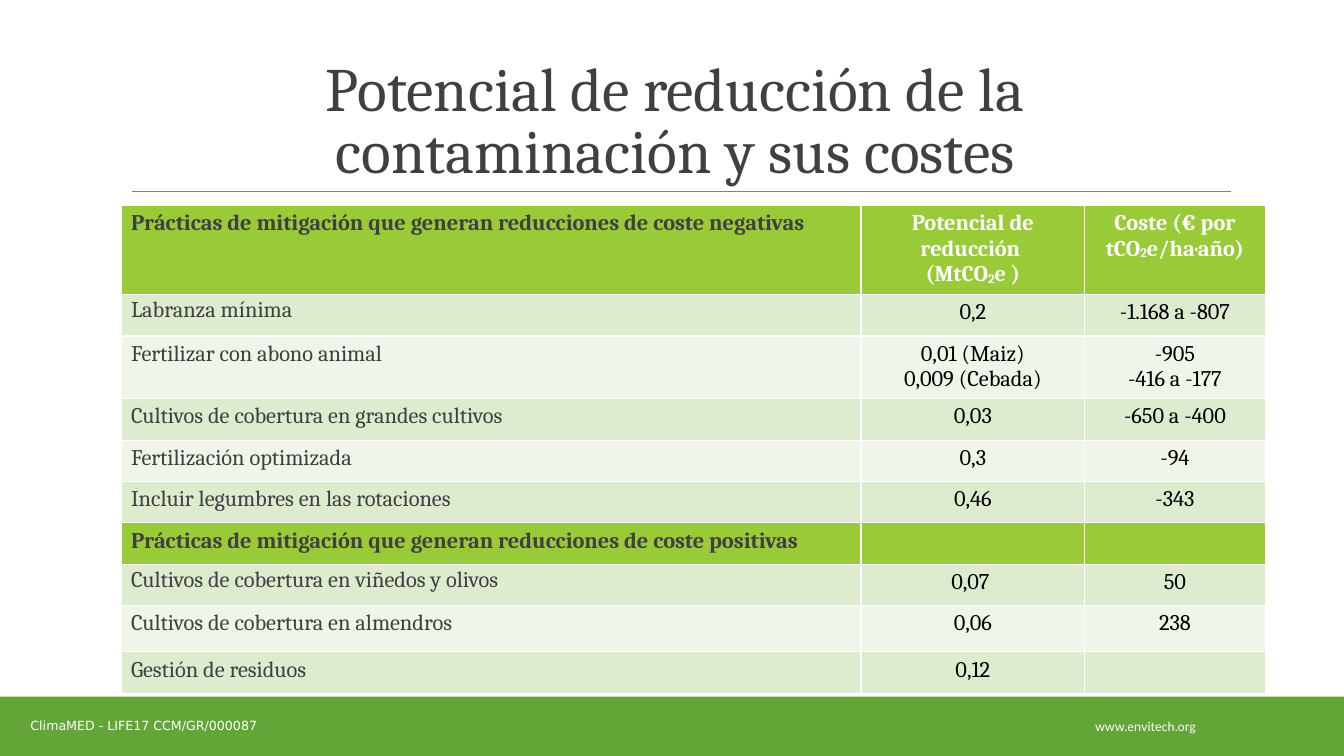
import pptx
import pptx.dml.color
import pptx.enum.shapes
import pptx.enum.text
import pptx.oxml.ns
import pptx.util
from lxml import etree

RGBColor = pptx.dml.color.RGBColor
WHITE = RGBColor(0xFF, 0xFF, 0xFF)
BLACK = RGBColor(0x00, 0x00, 0x00)
GREY = RGBColor(0x40, 0x40, 0x40)
RULE_GREY = RGBColor(0x80, 0x80, 0x80)
LIME = RGBColor(0x99, 0xCB, 0x38)
GREEN = RGBColor(0x63, 0xA5, 0x37)
DARK_BAND = RGBColor(0xDD, 0xEB, 0xCE)
LIGHT_BAND = RGBColor(0xEF, 0xF5, 0xE8)
LEFT = pptx.enum.text.PP_ALIGN.LEFT
CENTER = pptx.enum.text.PP_ALIGN.CENTER
MIDDLE = pptx.enum.text.MSO_ANCHOR.MIDDLE
BOTTOM = pptx.enum.text.MSO_ANCHOR.BOTTOM

presentation = pptx.Presentation()
presentation.slide_width = pptx.util.Inches(13.33)
presentation.slide_height = pptx.util.Inches(7.5)
slide = presentation.slides.add_slide(presentation.slide_layouts[6])


def box(left, top, width, height):
    """Turn percentages of the slide into lengths."""
    across = presentation.slide_width / 100
    down = presentation.slide_height / 100
    return [round(length) for length in
            (left * across, top * down, width * across, height * down)]


def write(text_frame, text, font="Cambria", size=16, color=BLACK, bold=False,
          align=CENTER, spacing=0.98):
    """Fill a frame, one paragraph a line; ₂ becomes a lowered 2."""
    text_frame.word_wrap = True
    for index, line in enumerate(text.split("\n")):
        paragraph = text_frame.paragraphs[0] if index == 0 else text_frame.add_paragraph()
        paragraph.alignment = align
        paragraph.line_spacing = spacing
        before, subscript, after = line.partition("₂")
        for part in filter(None, (before, subscript, after)):
            run = paragraph.add_run()
            run.text = "2" if part == "₂" else part
            run.font.name = font
            run.font.size = pptx.util.Pt(size)
            run.font.bold = bold
            run.font.color.rgb = color
            if part == "₂":
                run.font._element.set("baseline", "-8000")


# Footer bands and rule under the title
for top, height, color in ((92.4, 0.93, LIME), (92.13, 7.87, GREEN)):
    band = slide.shapes.add_shape(pptx.enum.shapes.MSO_SHAPE.RECTANGLE,
                                  *box(0, top, 100, height))
    band.shadow.inherit = False
    band.fill.solid()
    band.fill.fore_color.rgb = color
    band.line.fill.background()

rule_left, rule_top, rule_right, rule_bottom = box(9.83, 25.33, 91.6, 25.33)
rule = slide.shapes.add_connector(pptx.enum.shapes.MSO_CONNECTOR.STRAIGHT,
                                  rule_left, rule_top, rule_right, rule_bottom)
rule.line.color.rgb = RULE_GREY
rule.line.width = pptx.util.Pt(0.5)
etree.SubElement(rule._element.spPr, pptx.oxml.ns.qn("a:effectLst"))

# Title and footer texts
texts = (
    ("www.envitech.org", box(76, 93.47, 18.45, 5.33), MIDDLE,
     dict(font="Lato", size=9, color=WHITE, spacing=1.0)),
    ("ClimaMED - LIFE17 CCM/GR/000087", box(0, 93.33, 21.38, 5.33), MIDDLE,
     dict(font="DejaVu Sans", size=9, color=WHITE, spacing=1.0)),
    ("Potencial de reducción de la contaminación y sus costes",
     box(9, 4.13, 82.52, 21.2), BOTTOM,
     dict(size=44, color=GREY, spacing=0.85)),
)
for text, place, anchor, style in texts:
    text_frame = slide.shapes.add_textbox(*place).text_frame
    text_frame.vertical_anchor = anchor
    write(text_frame, text, **style)

# Table of practices
practices = (
    ("Prácticas de mitigación que generan reducciones de coste negativas",
     "Potencial de reducción \n(MtCO₂e )", "Coste (€ por tCO₂e/ha·año)"),
    ("Labranza mínima", "0,2", "-1.168 a -807"),
    ("Fertilizar con abono animal", "0,01 (Maiz)\n0,009 (Cebada)", "-905\n-416 a -177"),
    ("Cultivos de cobertura en grandes cultivos", "0,03", "-650 a -400"),
    ("Fertilización optimizada", "0,3", "-94"),
    ("Incluir legumbres en las rotaciones", "0,46", "-343"),
    ("Prácticas de mitigación que generan reducciones de coste positivas", "", ""),
    ("Cultivos de cobertura en viñedos y olivos", "0,07 ", "50"),
    ("Cultivos de cobertura en almendros", "0,06", "238"),
    ("Gestión de residuos", "0,12", ""),
)
HEADING_ROWS = (0, 6)
AFTER_HEADING_ROWS = (1, 7)
column_shares = (55.06, 16.65, 13.43)
row_shares = [5.47] * len(practices)
row_shares[0] = 6.53
row_shares[8] = 6.13

table = slide.shapes.add_table(
    len(practices), len(column_shares),
    *box(9, 27.2, sum(column_shares), sum(row_shares))).table
table.first_row = False
table.horz_banding = False
for column, share in zip(table.columns, column_shares):
    column.width = box(0, 0, share, 0)[2]
for row, share in zip(table.rows, row_shares):
    row.height = box(0, 0, 0, share)[3]

for row_index, practice in enumerate(practices):
    heading = row_index in HEADING_ROWS
    band_color = LIME if heading else DARK_BAND if row_index % 2 else LIGHT_BAND
    for column_index, text in enumerate(practice):
        cell = table.cell(row_index, column_index)
        properties = cell._tc.get_or_add_tcPr()
        for side in ("a:lnL", "a:lnR", "a:lnT", "a:lnB"):
            border = etree.SubElement(properties, pptx.oxml.ns.qn(side),
                                      w=str(pptx.util.Pt(0.96)))
            border_fill = etree.SubElement(border, pptx.oxml.ns.qn("a:solidFill"))
            etree.SubElement(border_fill, pptx.oxml.ns.qn("a:srgbClr"), val=str(WHITE))
        cell.fill.solid()
        cell.fill.fore_color.rgb = band_color
        if column_index == 0:
            spacing = 0.88 if row_index in AFTER_HEADING_ROWS else 0.98
            write(cell.text_frame, text, color=GREY, bold=heading,
                  align=LEFT, spacing=spacing)
        else:
            write(cell.text_frame, text, color=WHITE if heading else BLACK, bold=heading)

presentation.save("out.pptx")
